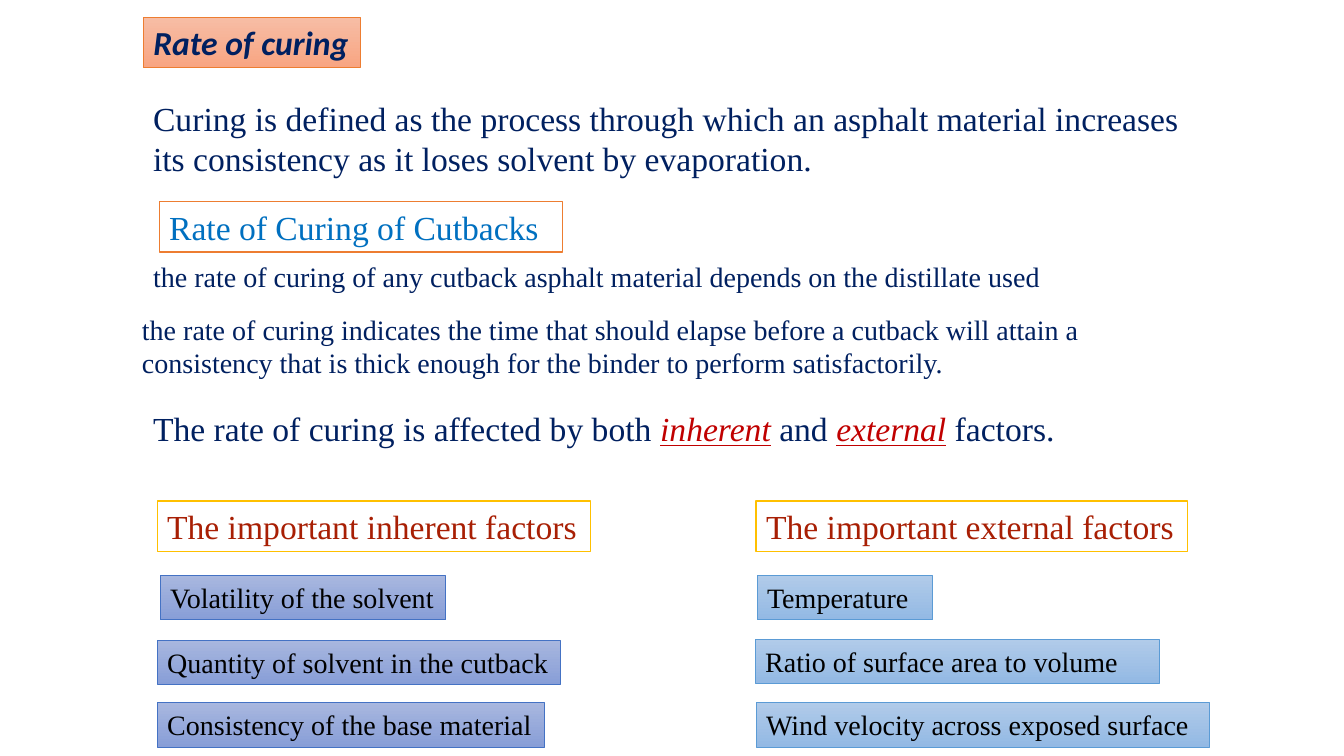
from dataclasses import dataclass
from typing import Optional

from pptx import Presentation
from pptx import util as u
from pptx.dml.color import RGBColor
from pptx.enum import shapes, text

COLORS = {
    "navy": "002060", "blue": "0070C0", "red": "C00000", "brick": "A81F04",
    "black": "000000", "white": "FFFFFF", "orange": "ED7D31", "gold": "FFC000",
    "indigo": "4472C4", "sky": "5B9BD5",
    "peach_top": "F7BDA5", "peach_end": "F8A582",
    "indigo_top": "A8B7DF", "indigo_end": "889ED7",
    "sky_top": "B1CBE9", "sky_end": "93B9E4",
}
SERIF = "Times New Roman"
EMPHASIS = {"italic": True, "underline": True}


@dataclass
class Style:
    size: int
    color: str
    fills: tuple[str, ...] = ()
    line: Optional[str] = None
    line_width: float = 0.5
    font: str = SERIF
    bold: bool = False
    italic: bool = False


@dataclass
class Block:
    left: float
    top: float
    width: float
    height: float
    words: str  # asterisks enclose emphasised words
    style: Style
    wrap: bool = True
    grow: bool = True


def rgb(name: str) -> RGBColor:
    return RGBColor.from_string(COLORS[name])


def paint(shape, style: Style) -> None:
    """Fill and outline a box: one fill is solid, two run from top to bottom."""
    if len(style.fills) == 2:
        shape.fill.gradient()
        shape.fill.gradient_angle = 270
        for stop, name in zip(shape.fill.gradient_stops, style.fills):
            stop.color.rgb = rgb(name)
    else:
        shape.fill.solid()
        shape.fill.fore_color.rgb = rgb(style.fills[0])
    shape.line.color.rgb = rgb(style.line)
    shape.line.width = u.Pt(style.line_width)


def write(shape, block: Block) -> None:
    style = block.style
    sizing = text.MSO_AUTO_SIZE
    frame_format = {
        "word_wrap": block.wrap,
        "auto_size": sizing.SHAPE_TO_FIT_TEXT if block.grow else sizing.NONE,
        "vertical_anchor": text.MSO_ANCHOR.TOP,
    }
    for key, value in frame_format.items():
        setattr(shape.text_frame, key, value)
    paragraph = shape.text_frame.paragraphs[0]
    paragraph.alignment = text.PP_ALIGN.LEFT
    for index, words in enumerate(block.words.split("*")):
        run = paragraph.add_run()
        run.text = words
        emphasised = index % 2 == 1
        font_format = {"name": style.font, "size": u.Pt(style.size),
                       "bold": style.bold, "italic": style.italic}
        if emphasised:
            font_format |= EMPHASIS
        for key, value in font_format.items():
            setattr(run.font, key, value)
        run.font.color.rgb = rgb("red" if emphasised else style.color)


def draw(slide, block: Block, placeholder=None) -> None:
    place = [u.Inches(n) for n in (block.left, block.top, block.width, block.height)]
    if placeholder is not None:
        shape = placeholder
        shape.left, shape.top, shape.width, shape.height = place
    elif block.style.fills:
        shape = slide.shapes.add_shape(shapes.MSO_SHAPE.RECTANGLE, *place)
        shape.shadow.inherit = False
    else:
        shape = slide.shapes.add_textbox(*place)
    if block.style.fills:
        paint(shape, block.style)
    write(shape, block)


HEADLINE = Style(24, "navy", ("peach_top", "peach_end"), "orange",
                 font="Calibri", bold=True, italic=True)
STATEMENT = Style(24, "navy")
DETAIL = Style(20, "navy")
SUBHEAD = Style(24, "blue", ("white",), "orange", 1)
FACTOR_HEAD = Style(24, "brick", ("white",), "gold", 1)
INHERENT = Style(20, "black", ("indigo_top", "indigo_end"), "indigo")
EXTERNAL = Style(20, "black", ("sky_top", "sky_end"), "sky")

# A title placeholder that grows keeps its layout height, so this one is fixed
HEADING = Block(1.42, 0.17, 2.15, 0.5, "Rate of curing", HEADLINE,
                wrap=False, grow=False)

EXPLANATION = [
    Block(1.42, 0.92, 10.58, 0.91,
          "Curing is defined as the process through which an asphalt material "
          "increases its consistency as it loses solvent by evaporation.", STATEMENT),
    Block(1.58, 2, 4, 0.5, "Rate of Curing of Cutbacks", SUBHEAD),
    Block(1.42, 2.53, 10.58, 0.44,
          "the rate of curing of any cutback asphalt material depends on the "
          "distillate used", DETAIL),
    Block(1.31, 3.05, 10.77, 0.77,
          "the rate of curing indicates the time that should elapse before a cutback "
          "will attain a consistency that is thick enough for the binder to perform "
          "satisfactorily.", DETAIL),
    Block(1.42, 4, 10.58, 0.5,
          "The rate of curing is affected by both *inherent* and *external* factors.",
          STATEMENT),
]

FACTORS = [
    Block(1.56, 4.97, 4.3, 0.5, "The important inherent factors", FACTOR_HEAD, False),
    Block(1.59, 5.71, 2.83, 0.44, "Volatility of the solvent", INHERENT, False),
    Block(1.56, 6.35, 4, 0.44, "Quantity of solvent in the cutback", INHERENT, False),
    Block(1.56, 6.97, 3.84, 0.44, "Consistency of the base material", INHERENT),
    Block(7.5, 4.97, 4.28, 0.5, "The important external factors", FACTOR_HEAD, False),
    Block(7.51, 5.71, 1.74, 0.44, "Temperature", EXTERNAL),
    Block(7.49, 6.34, 4.01, 0.44, "Ratio of surface area to volume", EXTERNAL),
    Block(7.5, 6.97, 4.49, 0.44, "Wind velocity across exposed surface", EXTERNAL),
]


def main() -> None:
    deck = Presentation()
    deck.slide_width, deck.slide_height = u.Inches(13.33), u.Inches(7.5)
    slide = deck.slides.add_slide(deck.slide_layouts.get_by_name("Title Only"))

    # Heading
    draw(slide, HEADING, slide.shapes.title)

    # Definition and explanation, then the two columns of factors
    for block in EXPLANATION + FACTORS:
        draw(slide, block)

    deck.save("out.pptx")


if __name__ == "__main__":
    main()
